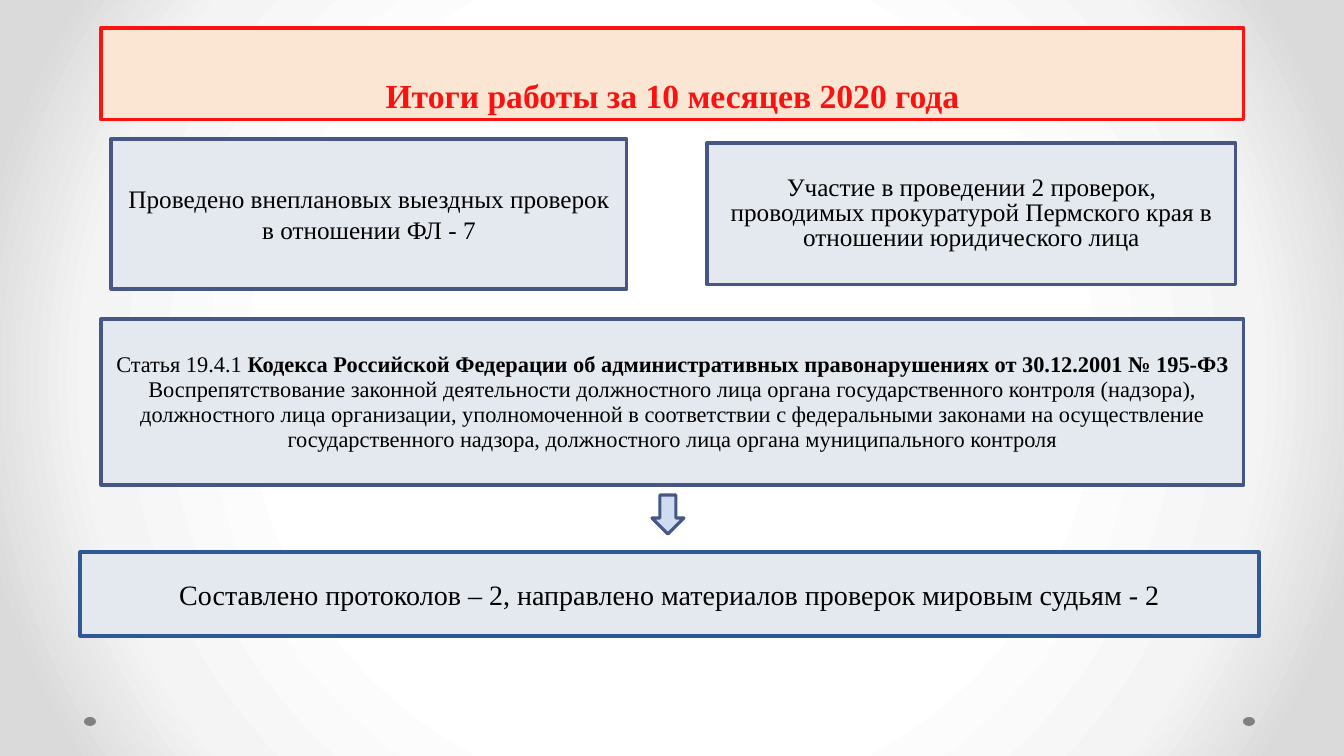
import pptx
import pptx.util
import pptx.oxml
import pptx.oxml.ns
import pptx.dml.color
import pptx.enum.shapes
import pptx.enum.text

SHAPE = pptx.enum.shapes.MSO_SHAPE
ANCHOR = pptx.enum.text.MSO_ANCHOR
COLORS = {
    "title_fill": "FAE6D3", "title_line": "FC1310", "title_text": "FB1210",
    "box_fill": "E4E9EF", "box_line": "475785", "result_line": "2F5897",
    "arrow_fill": "CFDCF0", "dot": "808080", "text": "000000",
    "glow_center": "FFFFFF", "glow_middle": "F4F4F4", "glow_edge": "DADADA",
}


def px(length):
    return pptx.util.Emu(round(length * 914400 / 100.8))


def color(name):
    return pptx.dml.color.RGBColor.from_string(COLORS[name])


class SlideBuilder:
    font = "Times New Roman"
    line_width = pptx.util.Pt(2.25)

    def __init__(self, presentation):
        self.slide = presentation.slides.add_slide(presentation.slide_layouts[6])

    def background(self, stops):
        stop_xml = "".join(
            f'<a:gs pos="{percent * 1000}"><a:srgbClr val="{COLORS[name]}"/></a:gs>'
            for percent, name in stops
        )
        background = pptx.oxml.parse_xml(
            f'<p:bg {pptx.oxml.ns.nsdecls("p", "a")}><p:bgPr>'
            f'<a:gradFill rotWithShape="1"><a:gsLst>{stop_xml}</a:gsLst>'
            '<a:path path="circle"><a:fillToRect l="50000" t="50000" r="50000" b="50000"/></a:path>'
            '</a:gradFill><a:effectLst/></p:bgPr></p:bg>'
        )
        self.slide.element.cSld.insert(0, background)

    def shape(self, kind, bounds, fill, line=None):
        shape = self.slide.shapes.add_shape(kind, *map(px, bounds))
        shape.shadow.inherit = False
        shape.fill.solid()
        shape.fill.fore_color.rgb = color(fill)
        if line:
            shape.line.color.rgb = color(line)
            shape.line.width = self.line_width
        else:
            shape.line.fill.background()
        return shape

    def box(self, bounds, pieces, size, fill="box_fill", line="box_line",
            text_color="text", anchor=ANCHOR.MIDDLE, spacing=None):
        text_frame = self.shape(SHAPE.RECTANGLE, bounds, fill, line).text_frame
        text_frame.word_wrap = True
        text_frame.vertical_anchor = anchor
        paragraph = text_frame.paragraphs[0]
        paragraph.alignment = pptx.enum.text.PP_ALIGN.CENTER
        if spacing:
            paragraph.line_spacing = pptx.util.Pt(spacing)
        for text, bold in pieces:
            run = paragraph.add_run()
            run.text = text
            run.font.name = self.font
            run.font.size = pptx.util.Pt(size)
            run.font.bold = bold
            run.font.color.rgb = color(text_color)


def main():
    presentation = pptx.Presentation()
    presentation.slide_width = px(1344)
    presentation.slide_height = px(756)
    builder = SlideBuilder(presentation)

    builder.background([(50, "glow_center"), (76, "glow_middle"), (92, "glow_edge")])
    for left in (84, 1243):
        builder.shape(SHAPE.OVAL, (left, 717, 12, 9), "dot")

    builder.box((101, 28, 1143, 92), [("Итоги работы за 10 месяцев 2020 года", True)], 24,
                fill="title_fill", line="title_line", text_color="title_text",
                anchor=ANCHOR.BOTTOM, spacing=18)
    builder.box((111, 139, 516, 150),
                [("Проведено внеплановых выездных проверок в отношении ФЛ - 7", False)], 18)
    builder.box((707, 143, 529, 142),
                [("Участие в проведении 2 проверок, проводимых прокуратурой Пермского края "
                  "в отношении юридического лица", False)], 18, spacing=18)
    builder.box((101, 319, 1143, 166), [
        ("Статья 19.4.1 ", False),
        ("Кодекса Российской Федерации об административных правонарушениях "
         "от 30.12.2001 № 195-ФЗ ", True),
        ("Воспрепятствование законной деятельности должностного лица органа "
         "государственного контроля (надзора), должностного лица организации, "
         "уполномоченной в соответствии с федеральными законами на осуществление "
         "государственного надзора, должностного лица органа муниципального контроля", False),
    ], 16, spacing=18)
    builder.shape(SHAPE.DOWN_ARROW, (652, 495, 32, 39), "arrow_fill", "box_line")
    builder.box((80, 552, 1179, 84),
                [("Составлено протоколов – 2, направлено материалов проверок мировым судьям - 2",
                  False)], 20, line="result_line")

    presentation.save("out.pptx")


if __name__ == "__main__":
    main()
